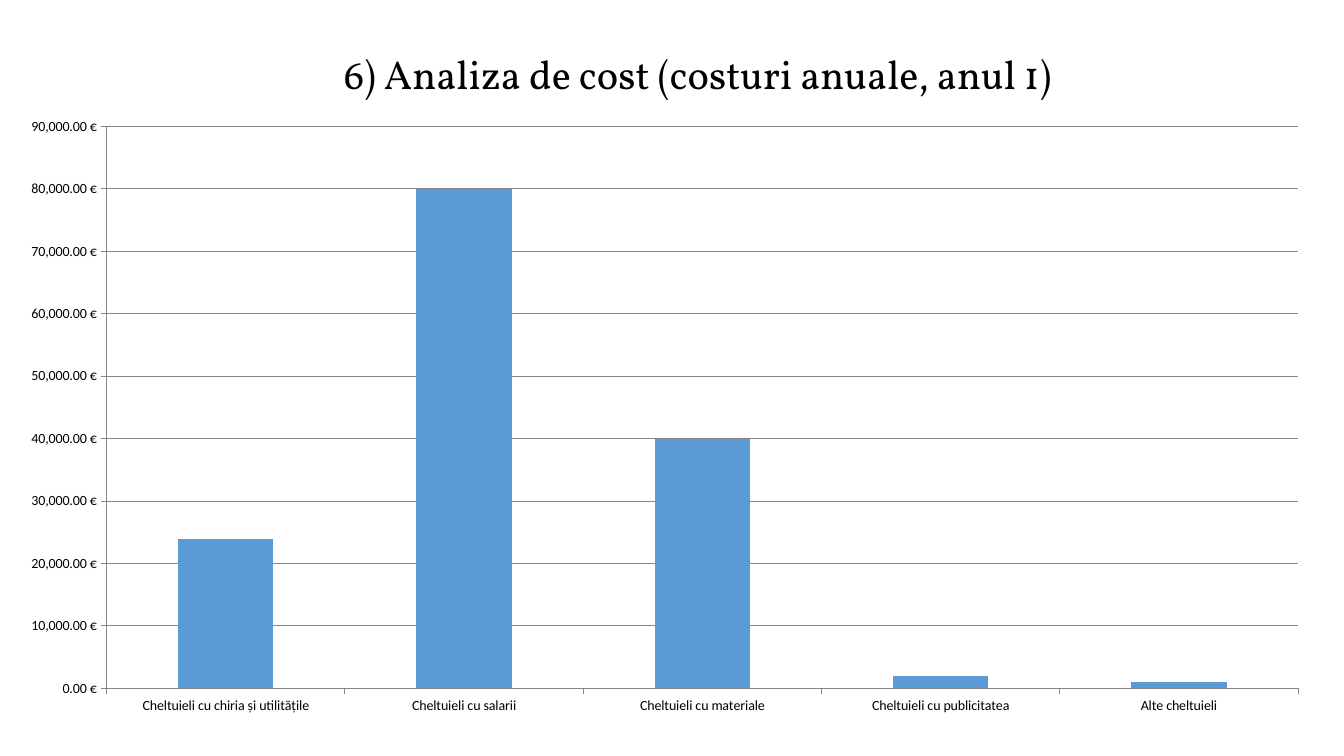
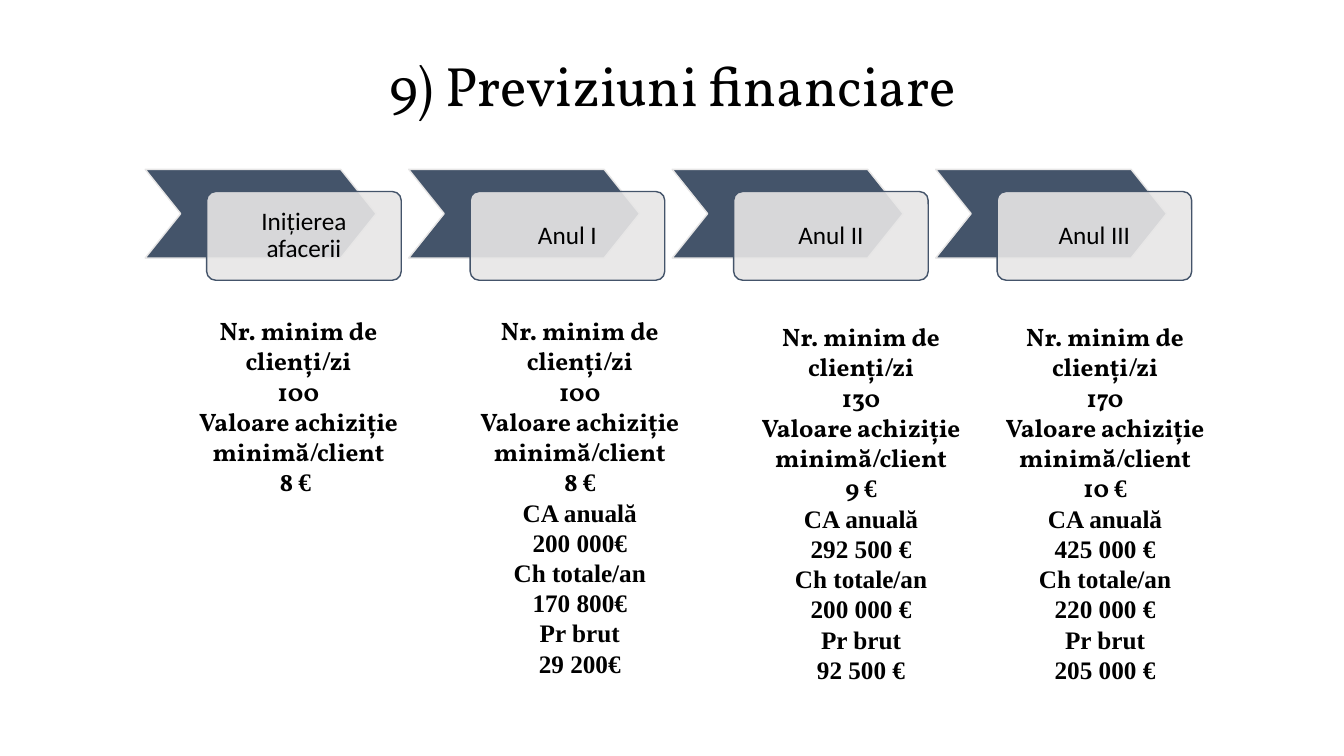
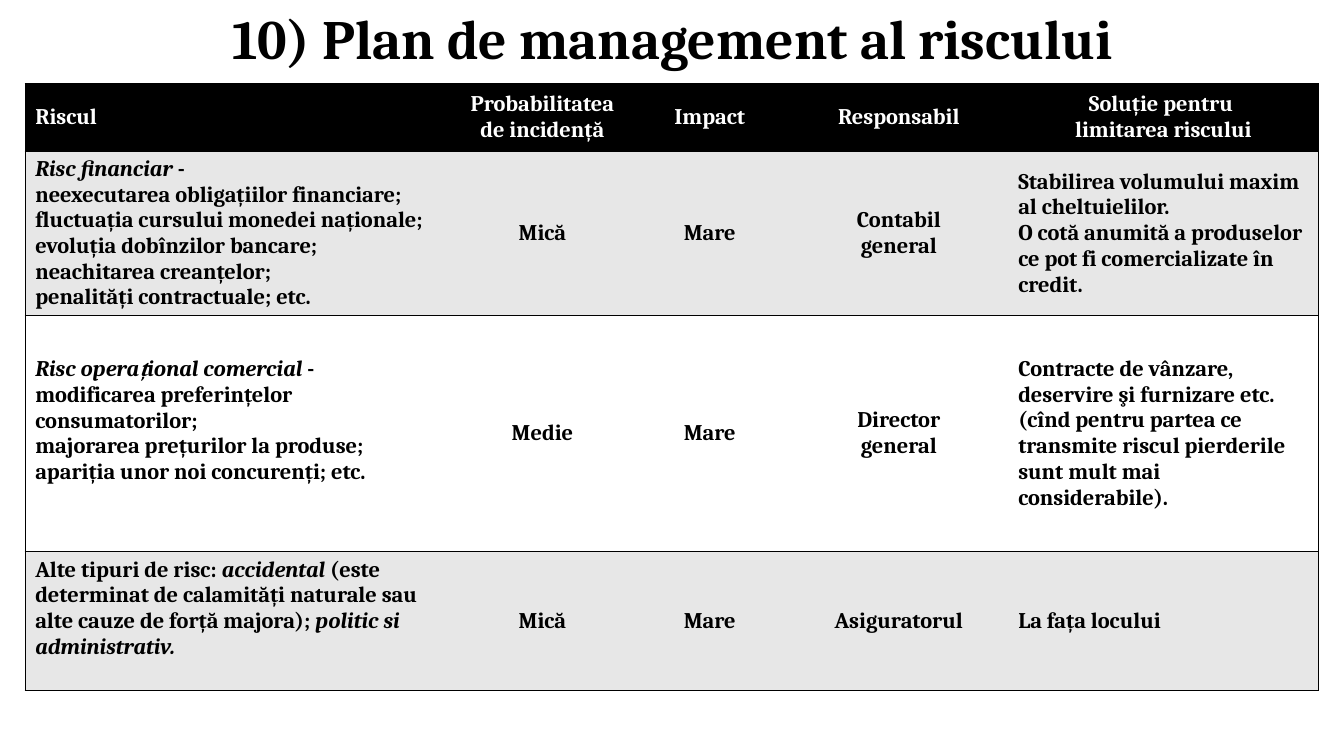
from lxml import etree
from pptx import Presentation
from pptx.chart.data import CategoryChartData
from pptx.dml.color import RGBColor
from pptx.enum import chart as ch, shapes, text
from pptx.oxml import parse_xml
from pptx.oxml.ns import nsdecls, qn
from pptx.util import Inches, Pt

BLACK = RGBColor(0x00, 0x00, 0x00)
WHITE = RGBColor(0xFF, 0xFF, 0xFF)
NAVY = RGBColor(0x44, 0x54, 0x6A)
PALE = RGBColor(0xE7, 0xE6, 0xE6)
BAND = RGBColor(0xE7, 0xE7, 0xE7)
BLUE = RGBColor(0x5B, 0x9B, 0xD5)
GRAY = RGBColor(0x87, 0x87, 0x87)
SERIF, TIMES = "Vollkorn", "Times New Roman"
MID, LEFT = text.PP_ALIGN.CENTER, text.PP_ALIGN.LEFT

# Content
COSTS = [
    ("Cheltuieli cu chiria și utilitățile", 24000),
    ("Cheltuieli cu salarii", 80000),
    ("Cheltuieli cu materiale", 40000),
    ("Cheltuieli cu publicitatea", 2000),
    ("Alte cheltuieli", 1000),
]
# Step, left and top of its figures, clients, purchase, yearly figures
LABELS = ["CA anuală", "Ch totale/an", "Pr brut"]
STEPS = [
    ("Inițierea afacerii", 1.75, 3.08, "100", ("8 ", "€ "), []),
    ("Anul I", 4.54, 3.08, "100", ("8 ", "€"),
     ["200 000€", "170 800€", "29 200€"]),
    ("Anul II", 7.33, 3.14, "130", ("9 ", "€"),
     ["292 500 €", "200 000 €", "92 500 €"]),
    ("Anul III", 9.75, 3.14, "170", ("10 ", "€"),
     ["425 000 €", "220 000 €", "205 000 €"]),
]
# Asterisks enclose italics
RISKS = [
    ["Riscul", "Probabilitatea de incidență", "Impact", "Responsabil",
     "Soluție pentru \nlimitarea riscului"],
    ["*Risc financiar *-\nneexecutarea obligațiilor financiare;\n"
     "fluctuația cursului monedei naționale;\nevoluția dobînzilor bancare;\n"
     "neachitarea creanțelor;\npenalități contractuale; etc.",
     "Mică", "Mare", "Contabil\ngeneral",
     "Stabilirea volumului maxim al cheltuielilor.\n"
     "O cotă anumită a produselor ce pot fi comercializate în credit."],
    ["*Risc operațional comercial *-\n"
     "modificarea preferințelor consumatorilor;\n"
     "majorarea prețurilor la produse;\napariția unor noi concurenți; etc.",
     "Medie", "Mare", "Director\ngeneral",
     "Contracte de vânzare, deservire şi furnizare etc. "
     "(cînd pentru partea ce\n"
     "transmite riscul pierderile sunt mult mai considerabile)."],
    ["Alte tipuri de risc: *accidental* (este determinat de calamități "
     "naturale sau alte cauze de forță majora); *politic si administrativ.*",
     "Mică", "Mare", "Asiguratorul", "La fața locului"],
]
WIDTHS = [4.26, 1.74, 1.58, 2.17, 3.08]
HEIGHTS = [0.67, 1.63, 2.34, 1.38]
FILLS = [BLACK, BAND, WHITE, BAND]


def box(*nums):
    return [Inches(n) for n in nums]


def write(para, words, size, face, color=BLACK, bold=False, italic=False):
    run = para.add_run()
    run.text = words
    look = dict(size=Pt(size), name=face, bold=bold, italic=italic)
    for key, val in look.items():
        setattr(run.font, key, val)
    run.font.color.rgb = color


def lines(frame, count, align):
    """Return count aligned paragraphs of a new frame."""
    paras = [frame.paragraphs[0]]
    paras += [frame.add_paragraph() for _ in range(count - 1)]
    for para in paras:
        para.alignment = align
    return paras


def start(deck, words, area, size, face=SERIF, bold=False, foot=0.05):
    """Add a slide with its title."""
    slide = deck.slides.add_slide(deck.slide_layouts[5])
    title = slide.shapes.title
    title.left, title.top, title.width, title.height = box(*area)
    frame = title.text_frame
    look = dict(word_wrap=True, auto_size=text.MSO_AUTO_SIZE.NONE,
                vertical_anchor=text.MSO_ANCHOR.MIDDLE,
                margin_bottom=Inches(foot))
    for key, val in look.items():
        setattr(frame, key, val)
    para = lines(frame, 1, MID)[0]
    para.line_spacing = 0.9
    write(para, words, size, face, bold=bold)
    return slide


def costs(deck):
    slide = start(deck, "6) Analiza de cost (costuri anuale, anul 1)",
                  (1.42, 0.58, 11, 0.83), 28.8, foot=0.52)
    data = CategoryChartData()
    data.categories = [name for name, _ in COSTS]
    data.add_series("Series 1", [val for _, val in COSTS])
    chart = slide.shapes.add_chart(
        ch.XL_CHART_TYPE.COLUMN_CLUSTERED,
        *box(0.25, 1.17, 12.83, 6.08), data).chart
    chart.has_legend = chart.has_title = False
    chart.font.size, chart.font.name = Pt(10), "Calibri"
    chart.font.color.rgb = BLACK
    plot = chart.plots[0]
    plot.gap_width, plot.vary_by_categories = 150, False
    fill = plot.series[0].format.fill
    fill.solid()
    fill.fore_color.rgb = BLUE

    # Axes
    axis = chart.value_axis
    axis.minimum_scale, axis.maximum_scale = 0, 90000
    axis.major_unit = 10000
    axis.tick_labels.number_format = r"#,##0.00\ [$€-407]"
    axis.tick_labels.number_format_is_linked = False
    axis.has_major_gridlines = True
    for part in (axis, chart.category_axis):
        part.major_tick_mark = ch.XL_TICK_MARK.OUTSIDE
    for part in (axis, axis.major_gridlines, chart.category_axis):
        part.format.line.color.rgb = GRAY
        part.format.line.width = Pt(0.75)

    # Plot area
    area = plot._element.getparent()
    for old in area.findall(qn("c:layout")):
        area.remove(old)
    marks = [("layoutTarget", "inner"), ("xMode", "edge"), ("yMode", "edge"),
             ("x", 0.063), ("y", 0.014), ("w", 0.921), ("h", 0.917)]
    inner = "".join(f'<c:{tag} val="{val}"/>' for tag, val in marks)
    area.insert(0, parse_xml(
        f'<c:layout {nsdecls("c")}><c:manualLayout>{inner}'
        '</c:manualLayout></c:layout>'))


def block(slide, kind, area, adj, fill, line):
    shape = slide.shapes.add_shape(kind, *box(*area))
    shape.shadow.inherit = False
    shape.adjustments[0] = adj
    shape.fill.solid()
    shape.fill.fore_color.rgb = fill
    shape.line.color.rgb = line
    shape.line.width = Pt(1)
    return shape


def forecast(deck):
    slide = start(deck, "9) Previziuni financiare",
                  (1.47, 0.51, 10.4, 0.74), 39.6)
    kinds = shapes.MSO_SHAPE
    for i, (name, left, top, count, spend, sums) in enumerate(STEPS):
        # Arrow with its card
        x = 1.44 + 7.84 / 3 * i
        block(slide, kinds.CHEVRON, (x, 1.68, 2.29, 0.88), 0.4, NAVY, PALE)
        card = block(slide, kinds.ROUNDED_RECTANGLE,
                     (x + 0.61, 1.9, 1.93, 0.88), 0.1, PALE, NAVY)
        tint = card.fill._xPr.find(qn("a:solidFill"))[0]
        etree.SubElement(tint, qn("a:alpha")).set("val", "90000")
        frame = card.text_frame
        frame.word_wrap = True
        frame.vertical_anchor = text.MSO_ANCHOR.MIDDLE
        for side in ("left", "top", "right", "bottom"):
            setattr(frame, f"margin_{side}", Inches(0.14))
        para = lines(frame, 1, MID)[0]
        para.line_spacing = 0.9
        write(para, name, 18, "Calibri")

        # Figures below
        rows = [[("Nr. minim de clienți/zi", SERIF)], [(count, SERIF)],
                [("Valoare achiziție minimă/client", SERIF)],
                [(spend[0], SERIF), (spend[1], TIMES)]]
        for pair in zip(LABELS, sums):
            rows += [[(words, TIMES)] for words in pair]
        high = 4.04 if sums else 2.22
        frame = slide.shapes.add_textbox(
            *box(left, top, 2.42, high)).text_frame
        frame.word_wrap = True
        for para, row in zip(lines(frame, len(rows), MID), rows):
            for words, face in row:
                write(para, words, 18, face, bold=True)


def edge(cell, sides):
    props = cell._tc.get_or_add_tcPr()
    for i, side in enumerate(sides):
        props.insert(i, parse_xml(
            f'<a:ln{side} {nsdecls("a")} w="12700"><a:solidFill>'
            f'<a:srgbClr val="{BLACK}"/></a:solidFill></a:ln{side}>'))


def risks(deck):
    slide = start(deck, "10) Plan de management al riscului",
                  (1.47, 0.17, 10.4, 0.49), 39.6, "Cambria", True)
    table = slide.shapes.add_table(
        len(HEIGHTS), len(WIDTHS),
        *box(0.25, 0.83, sum(WIDTHS), sum(HEIGHTS))).table
    # Plain style without grid
    table._tbl.tblPr.find(qn("a:tableStyleId")).text = (
        "{2D5ABB26-0587-4C30-8999-92F81FD0307C}")
    for col, wide in zip(table.columns, WIDTHS):
        col.width = Inches(wide)
    last = len(WIDTHS) - 1
    for r, row in enumerate(RISKS):
        table.rows[r].height = Inches(HEIGHTS[r])
        for c, words in enumerate(row):
            cell = table.cell(r, c)
            cell.fill.solid()
            cell.fill.fore_color.rgb = FILLS[r]
            cell.vertical_anchor = text.MSO_ANCHOR.MIDDLE
            if c == 0 and r > 1:
                cell.margin_bottom = Inches(0.3)
            edge(cell, "L" * (c == 0) + "R" * (c == last) + "TB")
            side = c == 0 or (c == last and r > 0)
            parts = words.split("\n")
            paras = lines(cell.text_frame, len(parts), LEFT if side else MID)
            for para, part in zip(paras, parts):
                for i, bit in enumerate(part.split("*")):
                    if bit:
                        write(para, bit, 16, "Cambria",
                              BLACK if r else WHITE, True, i % 2 == 1)


def main():
    deck = Presentation()
    deck.slide_width, deck.slide_height = box(13.33, 7.5)
    for make in (costs, forecast, risks):
        make(deck)
    deck.save("out.pptx")


if __name__ == "__main__":
    main()
